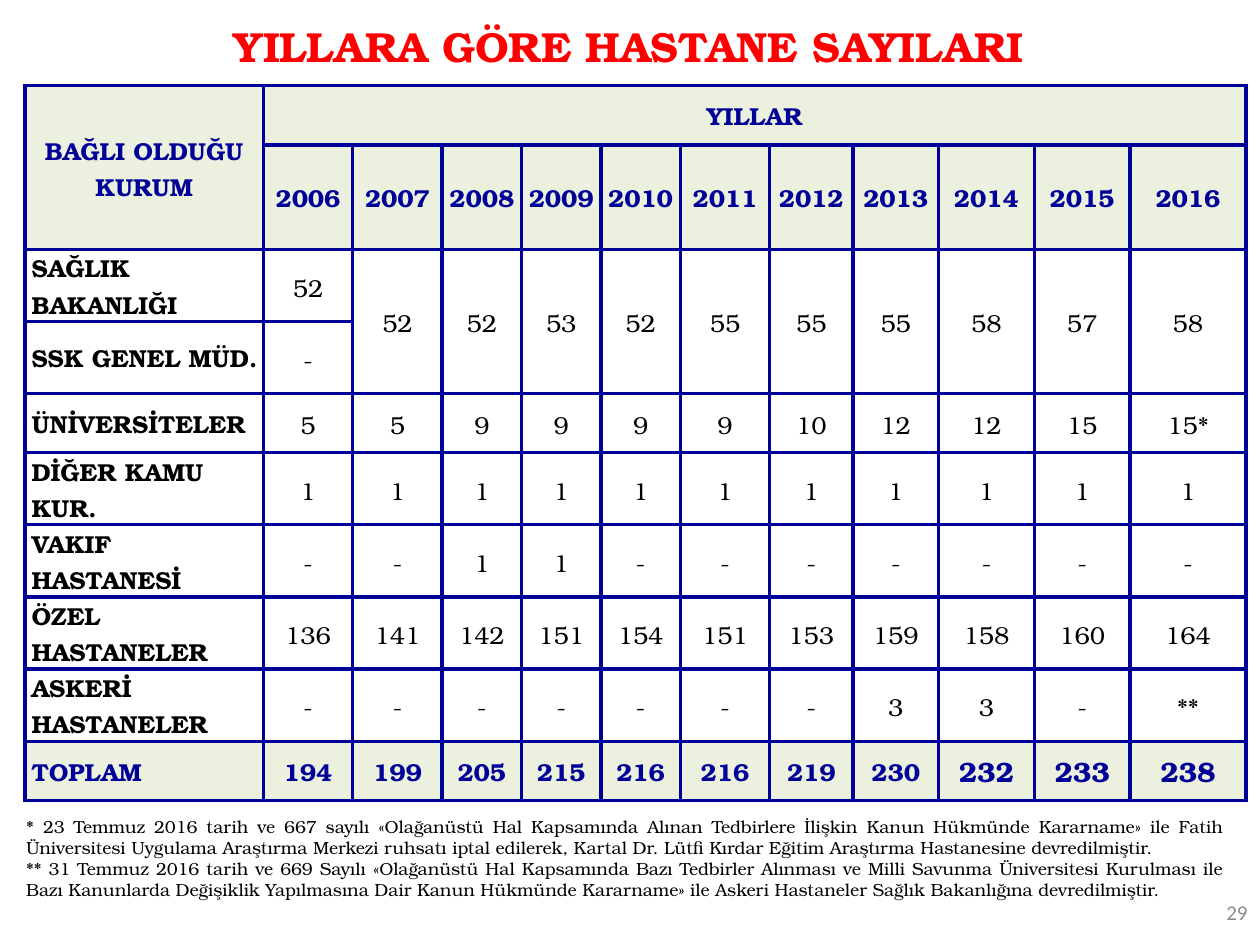
"""Build a slide with a table of hospital counts by institution and year."""
from dataclasses import dataclass

from lxml.etree import SubElement
from pptx import Presentation
from pptx.dml.color import RGBColor
from pptx.enum.text import MSO_ANCHOR, PP_ALIGN
from pptx.oxml.ns import qn
from pptx.slide import Slide
from pptx.table import Table, _Cell
from pptx.text.text import _Paragraph
from pptx.util import Inches, Pt

NAVY = RGBColor(0x00, 0x00, 0x99)
BLACK = RGBColor(0x00, 0x00, 0x00)
WHITE = RGBColor(0xFF, 0xFF, 0xFF)
RED = RGBColor(0xFF, 0x00, 0x00)
GRAY = RGBColor(0x8C, 0x8C, 0x8C)
PALE_GREEN = RGBColor(0xEB, 0xF1, 0xDE)
SERIF = "TeX Gyre Bonum"
BORDER_WIDTH = Pt(2.25)

COLUMN_WIDTHS = [1.89, 0.71, 0.71, 0.63, 0.63, 0.63, 0.71, 0.66, 0.68, 0.76, 0.76, 0.92]
ROW_HEIGHTS = [0.47, 0.83, 0.57, 0.57, 0.47, 0.57, 0.57, 0.57, 0.57, 0.47]
FIRST_YEAR = 2006
LARGE_TOTALS_FROM = 9
MINISTRY_ROW = 2


@dataclass(frozen=True)
class TextStyle:
    size: float
    color: RGBColor = BLACK
    bold: bool = False
    align: PP_ALIGN = PP_ALIGN.CENTER
    font: str = SERIF
    line_height: float | None = None


@dataclass(frozen=True)
class TextBlock:
    left: float
    top: float
    width: float
    height: float
    lines: tuple[str, ...]
    style: TextStyle
    anchor: MSO_ANCHOR = MSO_ANCHOR.MIDDLE


@dataclass(frozen=True)
class Institution:
    name: str
    counts: str


HEADER = TextStyle(14, NAVY, True, line_height=20.6)
LABEL = TextStyle(14, BLACK, True, PP_ALIGN.LEFT, line_height=20.6)
VALUE = TextStyle(14, line_height=20.6)
TOTAL_LABEL = TextStyle(14, NAVY, True, PP_ALIGN.LEFT)
LARGE_TOTAL = TextStyle(16, NAVY, True)

INSTITUTIONS = [
    Institution("SAĞLIK BAKANLIĞI", "52 52 52 53 52 55 55 55 58 57 58"),
    Institution("SSK GENEL MÜD.", "-"),
    Institution("ÜNİVERSİTELER", "5 5 9 9 9 9 10 12 12 15 15*"),
    Institution("DİĞER KAMU KUR.", "1 1 1 1 1 1 1 1 1 1 1"),
    Institution("VAKIF HASTANESİ", "- - 1 1 - - - - - - -"),
    Institution("ÖZEL HASTANELER", "136 141 142 151 154 151 153 159 158 160 164"),
    Institution("ASKERİ HASTANELER", "- - - - - - - 3 3 - **"),
]
TOTALS = Institution("TOPLAM", "194 199 205 215 216 216 219 230 232 233 238")

TEXT_BLOCKS = [
    TextBlock(7.52, 6.98, 2.48, 0.52, ("29",),
              TextStyle(12, GRAY, align=PP_ALIGN.RIGHT, font="Calibri")),
    TextBlock(0.11, 0.05, 9.76, 0.63, ("YILLARA GÖRE HASTANE SAYILARI",),
              TextStyle(24, RED, True)),
    TextBlock(0.11, 6.43, 9.69, 0.77, (
        "* 23 Temmuz 2016 tarih ve 667 sayılı «Olağanüstü Hal Kapsamında Alınan "
        "Tedbirlere İlişkin Kanun Hükmünde Kararname» ile Fatih Üniversitesi Uygulama "
        "Araştırma Merkezi ruhsatı iptal edilerek, Kartal Dr. Lütfi Kırdar Eğitim "
        "Araştırma Hastanesine devredilmiştir.",
        "** 31 Temmuz 2016 tarih ve 669 Sayılı «Olağanüstü Hal Kapsamında Bazı Tedbirler "
        "Alınması ve Milli Savunma Üniversitesi Kurulması ile Bazı Kanunlarda Değişiklik "
        "Yapılmasına Dair Kanun Hükmünde Kararname» ile Askeri Hastaneler Sağlık "
        "Bakanlığına devredilmiştir.",
    ), TextStyle(10, align=PP_ALIGN.JUSTIFY, line_height=12), MSO_ANCHOR.TOP),
]


def style_paragraph(para: _Paragraph, style: TextStyle) -> None:
    """Apply a text style to a whole paragraph."""
    para.alignment = style.align
    para.font.name = style.font
    para.font.size = Pt(style.size)
    para.font.bold = style.bold
    para.font.color.rgb = style.color
    if style.line_height:
        para.line_spacing = Pt(style.line_height)


def draw_text_block(page: Slide, block: TextBlock) -> None:
    """Draw a wrapped text box with one paragraph per line of the block."""
    box = page.shapes.add_textbox(Inches(block.left), Inches(block.top),
                                  Inches(block.width), Inches(block.height))
    frame = box.text_frame
    frame.word_wrap = True
    frame.vertical_anchor = block.anchor
    frame.text = "\n".join(block.lines)
    for para in frame.paragraphs:
        style_paragraph(para, block.style)


def add_borders(cell: _Cell) -> None:
    """Give a cell navy lines on its four sides."""
    properties = cell._tc.get_or_add_tcPr()
    for side in ("a:lnL", "a:lnR", "a:lnT", "a:lnB"):
        line = SubElement(properties, qn(side), w=str(BORDER_WIDTH))
        SubElement(SubElement(line, qn("a:solidFill")), qn("a:srgbClr"), val=str(NAVY))


def write_cell(cell: _Cell, text: str, style: TextStyle) -> None:
    """Write centred or left-aligned text into a cell."""
    cell.vertical_anchor = MSO_ANCHOR.MIDDLE
    cell.margin_left = Inches(0.05 if style.align == PP_ALIGN.LEFT else 0.01)
    cell.margin_right = Inches(0.01)
    cell.margin_top = cell.margin_bottom = Inches(0)
    cell.text = text
    style_paragraph(cell.text_frame.paragraphs[0], style)


def prepare_grid(table: Table) -> None:
    """Set sizes, borders, fills and merged areas of the table."""
    table.first_row = table.horz_banding = False
    for column, width in zip(table.columns, COLUMN_WIDTHS):
        column.width = Inches(width)
    last_row = len(ROW_HEIGHTS) - 1
    for row_index, height in enumerate(ROW_HEIGHTS):
        table.rows[row_index].height = Inches(height)
        shaded = row_index < MINISTRY_ROW or row_index == last_row
        for cell in table.rows[row_index].cells:
            add_borders(cell)
            cell.fill.solid()
            cell.fill.fore_color.rgb = PALE_GREEN if shaded else WHITE
            write_cell(cell, "", VALUE)
    table.cell(0, 0).merge(table.cell(1, 0))
    table.cell(0, 1).merge(table.cell(0, len(COLUMN_WIDTHS) - 1))
    for column_index in range(2, len(COLUMN_WIDTHS)):
        table.cell(MINISTRY_ROW, column_index).merge(
            table.cell(MINISTRY_ROW + 1, column_index))


def draw_hospital_table(page: Slide) -> None:
    """Draw the table of hospital counts."""
    table = page.shapes.add_table(
        len(ROW_HEIGHTS), len(COLUMN_WIDTHS), Inches(0.2), Inches(0.68),
        Inches(sum(COLUMN_WIDTHS)), Inches(sum(ROW_HEIGHTS))).table
    prepare_grid(table)
    write_cell(table.cell(0, 0), "BAĞLI OLDUĞU KURUM", HEADER)
    write_cell(table.cell(0, 1), "YILLAR", HEADER)
    for column_index in range(1, len(COLUMN_WIDTHS)):
        write_cell(table.cell(1, column_index), str(FIRST_YEAR + column_index - 1), HEADER)
    for row_index, institution in enumerate(INSTITUTIONS, MINISTRY_ROW):
        write_cell(table.cell(row_index, 0), institution.name, LABEL)
        for column_index, count in enumerate(institution.counts.split(), 1):
            write_cell(table.cell(row_index, column_index), count, VALUE)
    total_row = len(ROW_HEIGHTS) - 1
    write_cell(table.cell(total_row, 0), TOTALS.name, TOTAL_LABEL)
    for column_index, count in enumerate(TOTALS.counts.split(), 1):
        style = LARGE_TOTAL if column_index >= LARGE_TOTALS_FROM else HEADER
        write_cell(table.cell(total_row, column_index), count, style)


def main() -> None:
    """Build and save the deck."""
    deck = Presentation()
    deck.slide_width, deck.slide_height = Inches(10), Inches(7.5)
    page = deck.slides.add_slide(deck.slide_layouts[6])
    draw_hospital_table(page)
    for block in TEXT_BLOCKS:
        draw_text_block(page, block)
    deck.save("out.pptx")


if __name__ == "__main__":
    main()
